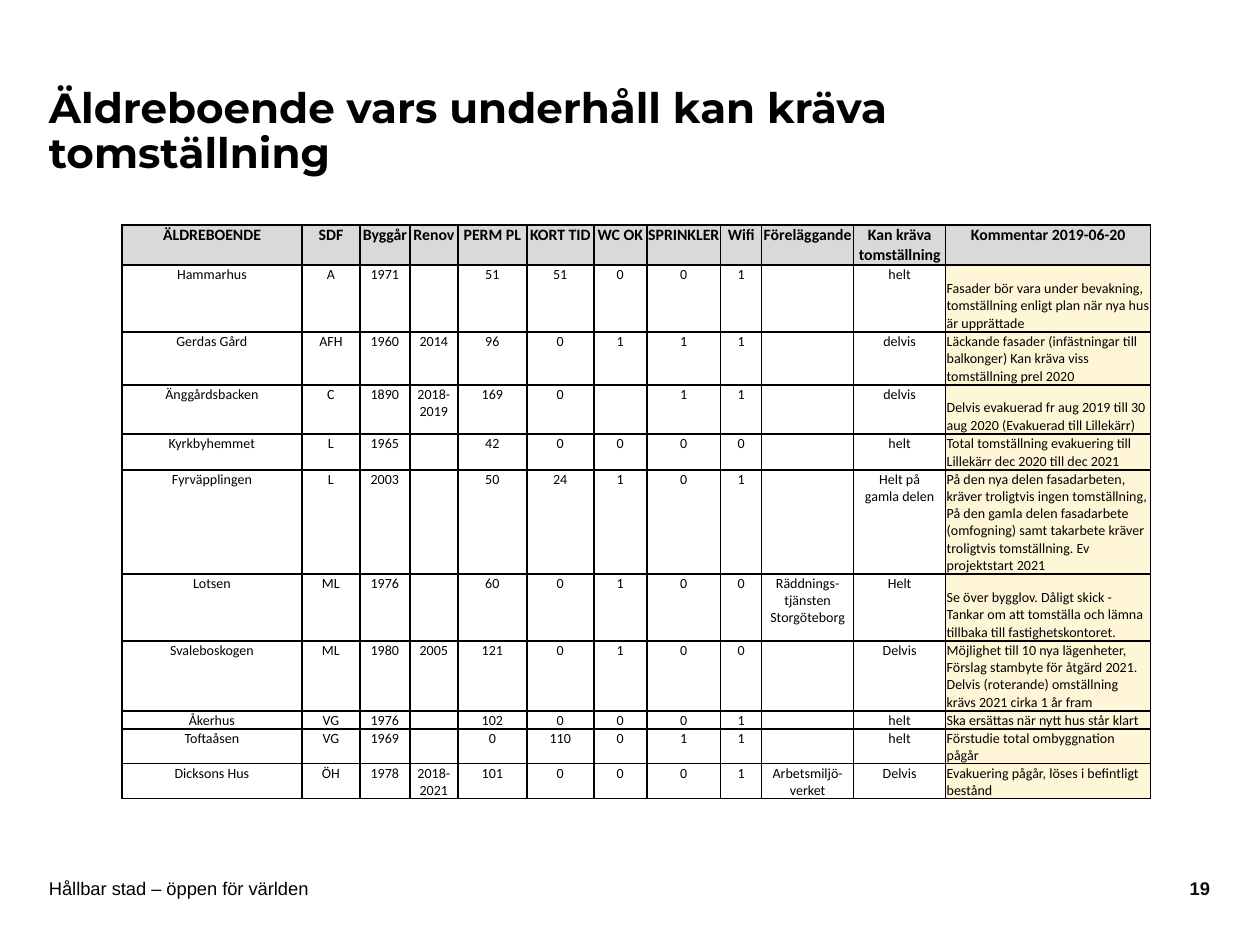
from lxml.etree import SubElement
from pptx import Presentation
from pptx.dml.color import RGBColor
from pptx.enum.text import MSO_ANCHOR as Anchor, PP_ALIGN as Align
from pptx.oxml import parse_xml
from pptx.oxml.ns import nsdecls, qn
from pptx.util import Emu, Pt

EMU_PER_PX = 914400 / 126
BLACK = RGBColor(0x00, 0x00, 0x00)
NEAR_BLACK = RGBColor(0x0D, 0x0D, 0x0D)
HEADER_GREY = RGBColor(0xD9, 0xD9, 0xD9)
COMMENT_CREAM = RGBColor(0xFF, 0xF5, 0xD7)


def px(length):
    return Emu(round(length * EMU_PER_PX))


def write(paragraph, text, font_name, size, color=BLACK, bold=False):
    """Add text as runs, with a line break at each newline."""
    for number, line in enumerate(text.split("\n")):
        if number:
            paragraph.add_line_break()
        run = paragraph.add_run()
        run.text = line
        run.font.name = font_name
        run.font.size = Pt(size)
        run.font.bold = bold
        run.font.color.rgb = color


prs = Presentation()
prs.slide_width, prs.slide_height = px(1260), px(945)
slide = prs.slides.add_slide(prs.slide_layouts[6])

# Title, footer and page number
LINES = [
    ((49, 53, 948, 159), "Äldreboende vars underhåll kan kräva tomställning",
     "Montserrat", 24, BLACK, True, Align.LEFT, 0.9),
    ((49, 878, 893, 20), "Hållbar stad – öppen för världen",
     "Arial", 10.5, BLACK, False, Align.LEFT, 1.0),
    ((1150, 878, 60, 20), "19",
     "Arial", 10.5, NEAR_BLACK, True, Align.RIGHT, 1.0),
]
for place, text, font_name, size, color, bold, align, spacing in LINES:
    frame = slide.shapes.add_textbox(*map(px, place)).text_frame
    frame.word_wrap = True
    frame.vertical_anchor = Anchor.MIDDLE
    frame.margin_left = frame.margin_right = frame.margin_top = frame.margin_bottom = 0
    paragraph = frame.paragraphs[0]
    paragraph.alignment = align
    paragraph.line_spacing = spacing
    write(paragraph, text, font_name, size, color, bold)

# Care homes
COLUMN_WIDTHS = [180, 58, 50, 48, 69, 67, 53, 74, 41, 92, 92, 205]
ROW_HEIGHTS = [40, 67, 53, 49, 36, 104, 67, 70, 18, 35, 35]
CARE_HOMES = [
    ["ÄLDREBOENDE", "SDF", "Byggår", "Renov", "PERM PL", "KORT TID", "WC OK",
     "SPRINKLER", "Wifi", "Föreläggande", "Kan kräva tomställning",
     "Kommentar 2019-06-20"],
    ["Hammarhus", "A", "1971", "", "51", "51", "0", "0", "1", "", "helt",
     "Fasader bör vara under bevakning,\n"
     "tomställning enligt plan när nya hus är upprättade"],
    ["Gerdas Gård", "AFH", "1960", "2014", "96", "0", "1", "1", "1", "", "delvis",
     "Läckande fasader (infästningar till balkonger) Kan kräva viss "
     "tomställning prel 2020"],
    ["Änggårdsbacken", "C", "1890", "2018-2019", "169", "0", "", "1", "1", "", "delvis",
     "Delvis evakuerad fr aug 2019 till 30 aug 2020 (Evakuerad till Lillekärr)"],
    ["Kyrkbyhemmet", "L", "1965", "", "42", "0", "0", "0", "0", "", "helt",
     "Total tomställning evakuering till Lillekärr dec 2020 till dec 2021"],
    ["Fyrväpplingen", "L", "2003", "", "50", "24", "1", "0", "1", "",
     "Helt på\ngamla delen",
     "På den nya delen fasadarbeten, kräver troligtvis ingen tomställning, "
     "På den gamla delen fasadarbete (omfogning) samt takarbete kräver "
     "troligtvis tomställning. Ev projektstart 2021"],
    ["Lotsen", "ML", "1976", "", "60", "0", "1", "0", "0",
     "Räddnings-tjänsten Storgöteborg", "Helt",
     "Se över bygglov. Dåligt skick - Tankar om att tomställa och lämna "
     "tillbaka till fastighetskontoret."],
    ["Svaleboskogen", "ML", "1980", "2005", "121", "0", "1", "0", "0", "", "Delvis",
     "Möjlighet till 10 nya lägenheter, Förslag stambyte för åtgärd 2021. "
     "Delvis (roterande) omställning krävs 2021 cirka 1 år fram"],
    ["Åkerhus", "VG", "1976", "", "102", "0", "0", "0", "1", "", "helt",
     "Ska ersättas när nytt hus står klart"],
    ["Toftaåsen", "VG", "1969", "", "0", "110", "0", "1", "1", "", "helt",
     "Förstudie total ombyggnation pågår"],
    ["Dicksons Hus", "ÖH", "1978", "2018-2021", "101", "0", "0", "0", "1",
     "Arbetsmiljö-verket", "Delvis",
     "Evakuering pågår, löses i befintligt bestånd"],
]
table = slide.shapes.add_table(
    len(ROW_HEIGHTS), len(COLUMN_WIDTHS), px(122), px(225),
    px(sum(COLUMN_WIDTHS)), px(sum(ROW_HEIGHTS))).table
table.first_row = table.horz_banding = False
for column, width in zip(table.columns, COLUMN_WIDTHS):
    column.width = px(width)
for row, height in zip(table.rows, ROW_HEIGHTS):
    row.height = px(height)

for row_number, home in enumerate(CARE_HOMES):
    for column_number, text in enumerate(home):
        is_header = row_number == 0
        is_comment = not is_header and column_number == len(home) - 1
        cell = table.cell(row_number, column_number)
        cell.margin_left = cell.margin_right = cell.margin_top = px(1)
        cell.margin_bottom = 0
        cell.vertical_anchor = Anchor.BOTTOM if is_comment else Anchor.TOP

        properties = cell._tc.get_or_add_tcPr()
        for side in ("lnL", "lnR", "lnT", "lnB"):
            properties.append(parse_xml(
                f'<a:{side} {nsdecls("a")} w="12700"><a:solidFill>'
                f'<a:srgbClr val="{BLACK}"/></a:solidFill></a:{side}>'))
        if is_header or is_comment:
            cell.fill.solid()
            cell.fill.fore_color.rgb = HEADER_GREY if is_header else COMMENT_CREAM
        else:
            cell.fill.background()

        paragraph = cell.text_frame.paragraphs[0]
        paragraph.alignment = Align.LEFT if is_comment else Align.CENTER
        if text:
            write(paragraph, text, "Calibri", 9 if is_header else 8, bold=is_header)
        else:
            # Keeps an empty cell from stretching its row
            SubElement(paragraph._p, qn("a:endParaRPr"), sz="800")

prs.save("out.pptx")
